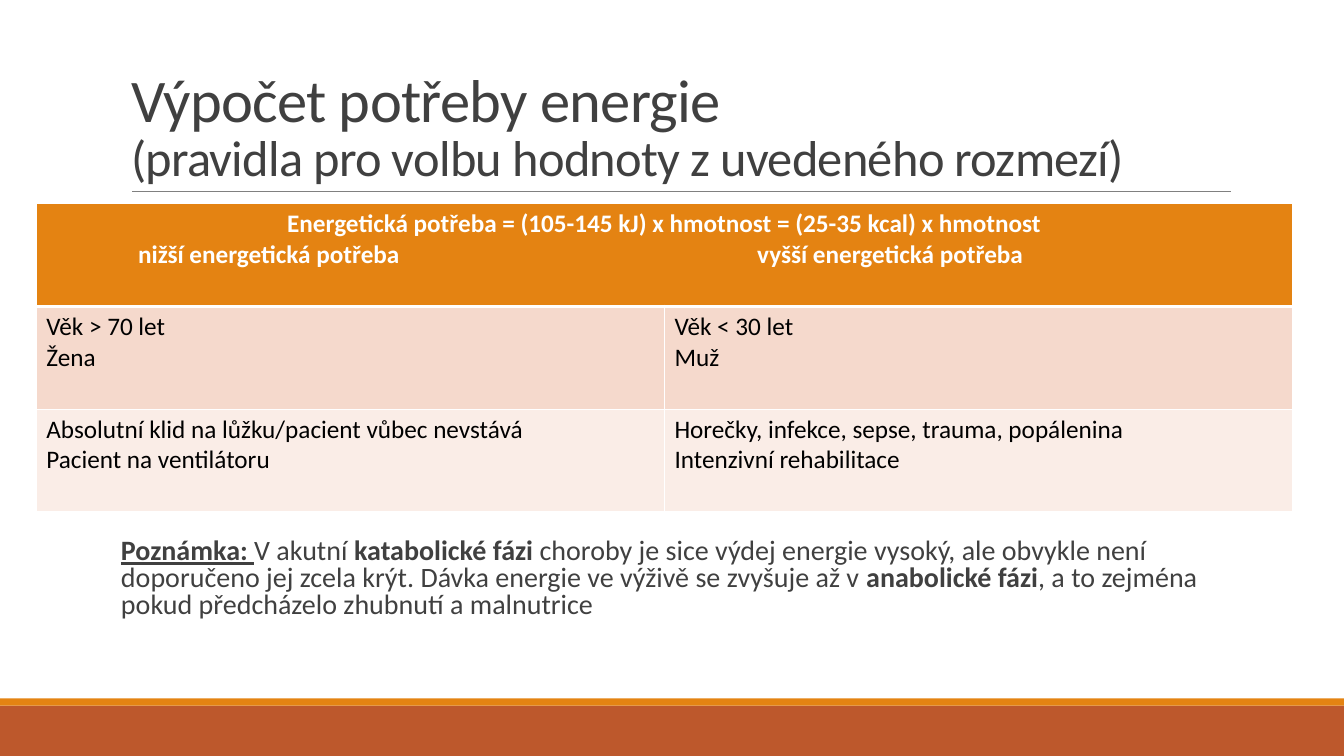
"""Builds a slide on choosing the energy requirement from a given range."""
from lxml import etree
from pptx import Presentation
from pptx.dml.color import RGBColor
from pptx.enum.shapes import MSO_CONNECTOR, MSO_SHAPE
from pptx.enum.text import MSO_ANCHOR, MSO_AUTO_SIZE, PP_ALIGN
from pptx.oxml import parse_xml
from pptx.oxml.ns import nsdecls, qn
from pptx.util import Inches, Pt

CENTER, LEFT = PP_ALIGN.CENTER, PP_ALIGN.LEFT
TOP, BOTTOM = MSO_ANCHOR.TOP, MSO_ANCHOR.BOTTOM
FIXED_SIZE = MSO_AUTO_SIZE.NONE
RECTANGLE, STRAIGHT = MSO_SHAPE.RECTANGLE, MSO_CONNECTOR.STRAIGHT

COLORS = {
    "text": "404040", "rule": "808080", "footer": "BD582C", "accent": "E48312",
    "white": "FFFFFF", "black": "000000", "row_dark": "F5D9CC", "row_light": "FAEDE7",
}
FONT = "Calibri"

TITLE = "Výpočet potřeby energie "
SUBTITLE = "(pravidla pro volbu hodnoty z uvedeného rozmezí)"
FORMULA = "Energetická potřeba = (105-145 kJ) x hmotnost = (25-35 kcal) x hmotnost"
NEED_LEVELS = ["nižší energetická potřeba", "vyšší energetická potřeba"]
NEED_TABS = [0.91, 7.05]
FACTORS = [
    ("row_dark", [["Věk > 70 let", "Žena"], ["Věk < 30 let", "Muž"]]),
    ("row_light", [
        ["Absolutní klid na lůžku/pacient vůbec nevstává", "Pacient na ventilátoru"],
        ["Horečky, infekce, sepse, trauma, popálenina", "Intenzivní rehabilitace"],
    ]),
]
NOTE = [
    ("Poznámka: ", {"bold": True, "underline": True}),
    ("V akutní ", {}),
    ("katabolické fázi ", {"bold": True}),
    ("choroby je sice výdej energie vysoký, ale obvykle není doporučeno jej zcela krýt. "
     "Dávka energie ve výživě se zvyšuje až v ", {}),
    ("anabolické fázi", {"bold": True}),
    (", a to zejména pokud předcházelo zhubnutí a malnutrice", {}),
]
BANDS = [("footer", 7, 0.5), ("accent", 6.93, 0.07)]
SLIDE_WIDTH, SLIDE_HEIGHT = 13.33, 7.5
TABLE_LEFT, TABLE_TOP, COLUMN_WIDTH, ROW_HEIGHT = 0.36, 2.02, 6.23, 1.02


def add_text(paragraph, text, size=18, color="text", bold=False, underline=False, spacing=None):
    run = paragraph.add_run()
    run.text = text
    font = run.font
    font.name, font.size, font.bold, font.underline = FONT, Pt(size), bold, underline
    font.color.rgb = RGBColor.from_string(COLORS[color])
    if spacing is not None:
        font._element.set("spc", str(int(spacing * 100)))


def place(placeholder, left, top, width, height, anchor):
    placeholder.left, placeholder.top = Inches(left), Inches(top)
    placeholder.width, placeholder.height = Inches(width), Inches(height)
    frame = placeholder.text_frame
    frame.auto_size, frame.word_wrap, frame.vertical_anchor = FIXED_SIZE, True, anchor
    paragraph = frame.paragraphs[0]
    paragraph.alignment = LEFT
    return frame, paragraph


def style_cell(cell, fill, bottom_width=1):
    cell.fill.solid()
    cell.fill.fore_color.rgb = RGBColor.from_string(COLORS[fill])
    sides = [("lnL", 1), ("lnR", 1), ("lnT", 1), ("lnB", bottom_width)]
    for position, (side, width) in enumerate(sides):
        border = parse_xml(
            f'<a:{side} {nsdecls("a")} w="{Pt(width)}"><a:solidFill>'
            f'<a:srgbClr val="{COLORS["white"]}"/></a:solidFill></a:{side}>')
        cell._tc.get_or_add_tcPr().insert(position, border)


def add_bands(slide):
    for color, top, height in BANDS:
        band = slide.shapes.add_shape(
            RECTANGLE, 0, Inches(top), Inches(SLIDE_WIDTH), Inches(height))
        band.shadow.inherit = False
        band.fill.solid()
        band.fill.fore_color.rgb = RGBColor.from_string(COLORS[color])
        band.line.fill.background()


def add_rule(slide):
    rule = slide.shapes.add_connector(
        STRAIGHT, Inches(1.31), Inches(1.9), Inches(12.21), Inches(1.9))
    rule.line.color.rgb = RGBColor.from_string(COLORS["rule"])
    rule.line.width = Pt(0.5)
    etree.SubElement(rule._element.spPr, qn("a:effectLst"))


def fill_title(slide):
    _, heading = place(slide.shapes.title, 1.2, 0.31, 11, 1.59, BOTTOM)
    heading.line_spacing = 0.85
    add_text(heading, TITLE, size=43.2, spacing=-0.5)
    heading.add_line_break()
    add_text(heading, SUBTITLE, size=36, spacing=-0.5)


def fill_note(slide):
    frame, note = place(slide.placeholders[1], 1.2, 5.3, 11, 1.12, TOP)
    frame.margin_left = frame.margin_right = 0
    properties = note._p.get_or_add_pPr()
    properties.set("marL", "0")
    properties.set("indent", "0")
    etree.SubElement(properties, qn("a:buNone"))
    note.line_spacing, note.space_before, note.space_after = 0.8, Pt(0), Pt(2)
    for text, emphasis in NOTE:
        add_text(note, text, size=20, **emphasis)


def add_factor_table(slide):
    table = slide.shapes.add_table(
        len(FACTORS) + 1, 2, Inches(TABLE_LEFT), Inches(TABLE_TOP),
        Inches(2 * COLUMN_WIDTH), Inches((len(FACTORS) + 1) * ROW_HEIGHT)).table
    for column in table.columns:
        column.width = Inches(COLUMN_WIDTH)
    for row in table.rows:
        row.height = Inches(ROW_HEIGHT)

    header = table.cell(0, 0)
    header.merge(table.cell(0, 1))
    for column in range(2):
        style_cell(table.cell(0, column), "accent", bottom_width=3)
    formula = header.text_frame.paragraphs[0]
    formula.alignment = CENTER
    add_text(formula, FORMULA, color="white", bold=True)
    levels = header.text_frame.add_paragraph()
    tabs = etree.SubElement(levels._p.get_or_add_pPr(), qn("a:tabLst"))
    for stop, level in zip(NEED_TABS, NEED_LEVELS):
        etree.SubElement(tabs, qn("a:tab"), pos=str(Inches(stop)), algn="l")
        add_text(levels, "\t" + level, color="white", bold=True)

    for row, (fill, groups) in enumerate(FACTORS, start=1):
        for column, factors in enumerate(groups):
            cell = table.cell(row, column)
            style_cell(cell, fill)
            for index, factor in enumerate(factors):
                frame = cell.text_frame
                paragraph = frame.add_paragraph() if index else frame.paragraphs[0]
                add_text(paragraph, factor, color="black")


def main():
    presentation = Presentation()
    presentation.slide_width = Inches(SLIDE_WIDTH)
    presentation.slide_height = Inches(SLIDE_HEIGHT)
    slide = presentation.slides.add_slide(presentation.slide_layouts[1])
    add_bands(slide)
    add_rule(slide)
    fill_title(slide)
    fill_note(slide)
    add_factor_table(slide)
    presentation.save("out.pptx")


if __name__ == "__main__":
    main()
